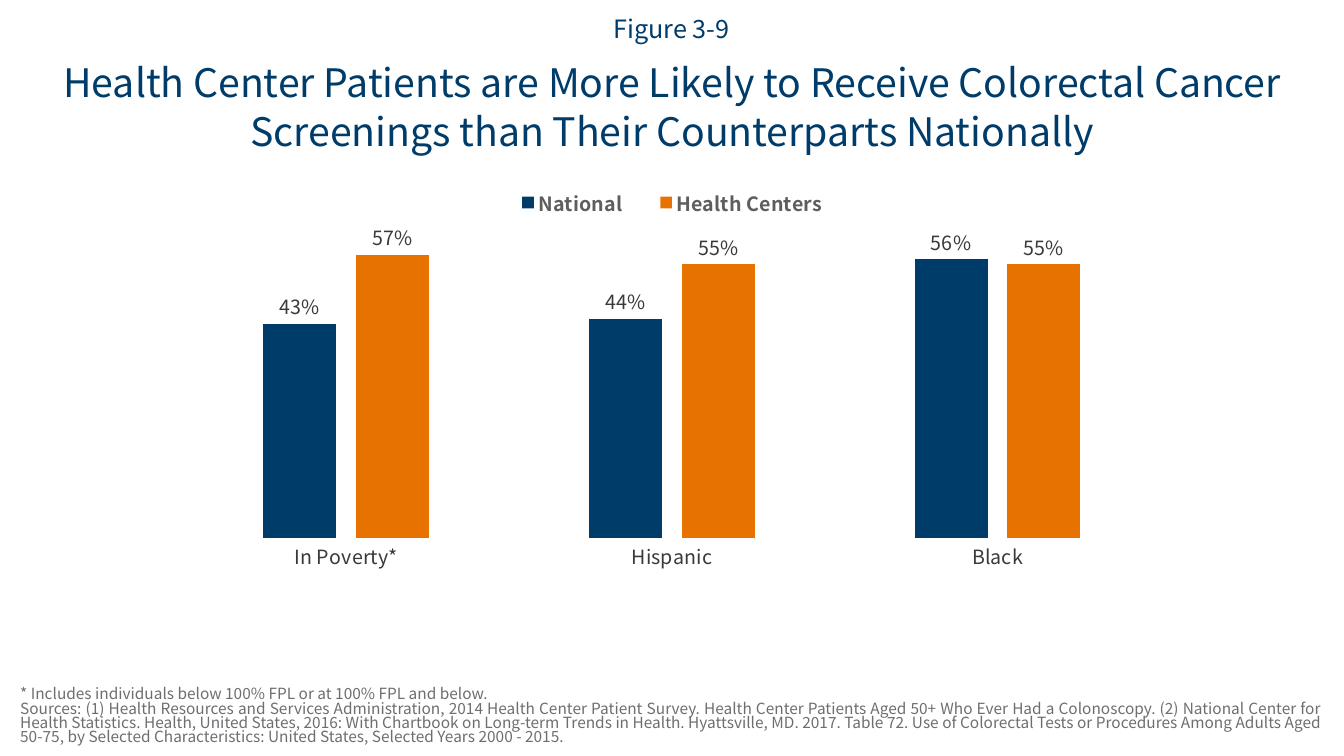
"""Builds the slide on colorectal cancer screening rates."""
from dataclasses import dataclass

from lxml.etree import SubElement
from pptx import Presentation
from pptx.chart.data import CategoryChartData
from pptx.dml.color import RGBColor
from pptx.enum.chart import XL_CHART_TYPE, XL_LABEL_POSITION, XL_LEGEND_POSITION, XL_TICK_MARK
from pptx.enum.text import MSO_ANCHOR, MSO_AUTO_SIZE, PP_ALIGN
from pptx.oxml.ns import qn
from pptx.util import Inches, Pt


@dataclass(frozen=True)
class Theme:
    """Holds the colours and type sizes."""
    font: str = "Noto Sans CJK JP"
    navy: str = "003C6A"
    orange: str = "E87200"
    dark: str = "3B3838"
    legend: str = "5E5E5E"
    gray: str = "6D6E71"
    head: int = 28
    figure: int = 18
    label: int = 14
    note: int = 11


class Deck:
    """Draws styled elements on the current slide."""

    def __init__(self, theme):
        """Opens a wide deck with one slide."""
        self.theme = theme
        self.show = Presentation()
        self.show.slide_width = Inches(13.33)
        self.show.slide_height = Inches(7.5)
        self.slide = self.show.slides.add_slide(self.show.slide_layouts[3])

    def style(self, font, size, color, bold=False):
        """Sets the face, size and colour of a font."""
        font.name = self.theme.font
        font.size = Pt(size)
        font.bold = bold
        font.color.rgb = RGBColor.from_string(color)

    def text(self, index, box, lines, size, color, align, anchor, spacing, before):
        """Moves a placeholder and fills it with plain paragraphs."""
        holder = self.slide.placeholders[index]
        holder.left, holder.top, holder.width, holder.height = map(Inches, box)
        frame = holder.text_frame
        frame.text = "\n".join(lines)
        frame.word_wrap = True
        frame.auto_size = MSO_AUTO_SIZE.NONE
        frame.vertical_anchor = anchor
        for para in frame.paragraphs:
            para.alignment = align
            para.line_spacing = spacing
            para.space_before = Pt(before)
            self.style(para.font, size, color)
            props = para._p.get_or_add_pPr()
            props.set("marL", "0")
            props.set("indent", "0")
            props.insert_element_before(
                props.makeelement(qn("a:buNone")), "a:tabLst", "a:defRPr", "a:extLst")

    def layout(self, parent, index, area, inner=False):
        """Pins a chart part to fractions of the chart area."""
        for old in parent.findall(qn("c:layout")):
            parent.remove(old)
        layout = parent.makeelement(qn("c:layout"))
        parent.insert(index, layout)
        manual = SubElement(layout, qn("c:manualLayout"))
        rules = [("layoutTarget", "inner")] if inner else []
        rules += [("xMode", "edge"), ("yMode", "edge"), *zip("xywh", area)]
        for name, value in rules:
            SubElement(manual, qn(f"c:{name}")).set("val", str(value))

    def chart(self, box, groups, series):
        """Adds a column chart of percentages with a legend on top."""
        theme = self.theme
        data = CategoryChartData(number_format="0%")
        data.categories = groups
        for name, values, _ in series:
            data.add_series(name, values)
        chart = self.slide.shapes.add_chart(
            XL_CHART_TYPE.COLUMN_CLUSTERED, *map(Inches, box), data).chart
        self.style(chart.font, 10, theme.navy)
        chart.has_title = False
        chart.has_legend = True
        chart.legend.position = XL_LEGEND_POSITION.TOP
        chart.legend.include_in_layout = False
        self.style(chart.legend.font, theme.label, theme.legend, True)
        self.layout(chart.legend._element, 1, (0.32, 0.01, 0.36, 0.07))

        axis = chart.category_axis
        axis.major_tick_mark = axis.minor_tick_mark = XL_TICK_MARK.NONE
        axis.format.line.fill.background()
        self.style(axis.tick_labels.font, theme.label, theme.dark)
        scale = chart.value_axis
        scale.minimum_scale, scale.maximum_scale = 0, 0.6
        scale.has_major_gridlines = False
        scale.visible = False

        plot = chart.plots[0]
        plot.gap_width, plot.overlap = 219, -27
        plot.vary_by_categories = False
        for bars, (_, _, color) in zip(plot.series, series):
            bars.format.fill.solid()
            bars.format.fill.fore_color.rgb = RGBColor.from_string(color)
            labels = bars.data_labels
            labels.show_value = True
            labels.number_format = "0%"
            labels.number_format_is_linked = False
            labels.position = XL_LABEL_POSITION.OUTSIDE_END
            self.style(labels.font, theme.label, theme.dark)
        area = chart._chartSpace.find(f".//{qn('c:plotArea')}")
        self.layout(area, 0, (0.015, 0.128, 0.969, 0.666), True)


def main():
    """Builds and saves the slide."""
    theme = Theme()
    deck = Deck(theme)
    deck.text(2, (0.1, 6.25, 13.12, 1.19), [
        "* Includes individuals below 100% FPL or at 100% FPL and below.",
        "Sources: (1) Health Resources and Services Administration, 2014 Health Center "
        "Patient Survey. Health Center Patients Aged 50+ Who Ever Had a Colonoscopy. "
        "(2) National Center for Health Statistics. Health, United States, 2016: With "
        "Chartbook on Long-term Trends in Health. Hyattsville, MD. 2017. Table 72. Use of "
        "Colorectal Tests or Procedures Among Adults Aged 50-75, by Selected "
        "Characteristics: United States, Selected Years 2000 - 2015.",
    ], theme.note, theme.gray, PP_ALIGN.JUSTIFY, MSO_ANCHOR.BOTTOM, 0.74, 1)
    deck.text(0, (0.48, 0.62, 12.37, 1.19), [
        "Health Center Patients are More Likely to Receive Colorectal Cancer",
        "Screenings than Their Counterparts Nationally",
    ], theme.head, theme.navy, PP_ALIGN.CENTER, MSO_ANCHOR.TOP, 0.8, 8)
    deck.text(1, (5.35, 0.06, 2.62, 0.48), ["Figure 3-9"], theme.figure, theme.navy,
              PP_ALIGN.CENTER, MSO_ANCHOR.MIDDLE, 0.9, 10)
    deck.chart((1.67, 1.81, 10, 4.44), ["In Poverty*", "Hispanic", "Black"], [
        ("National", (0.43, 0.44, 0.56), theme.navy),
        ("Health Centers", (0.57, 0.55, 0.55), theme.orange),
    ])
    deck.show.save("out.pptx")


if __name__ == "__main__":
    main()
